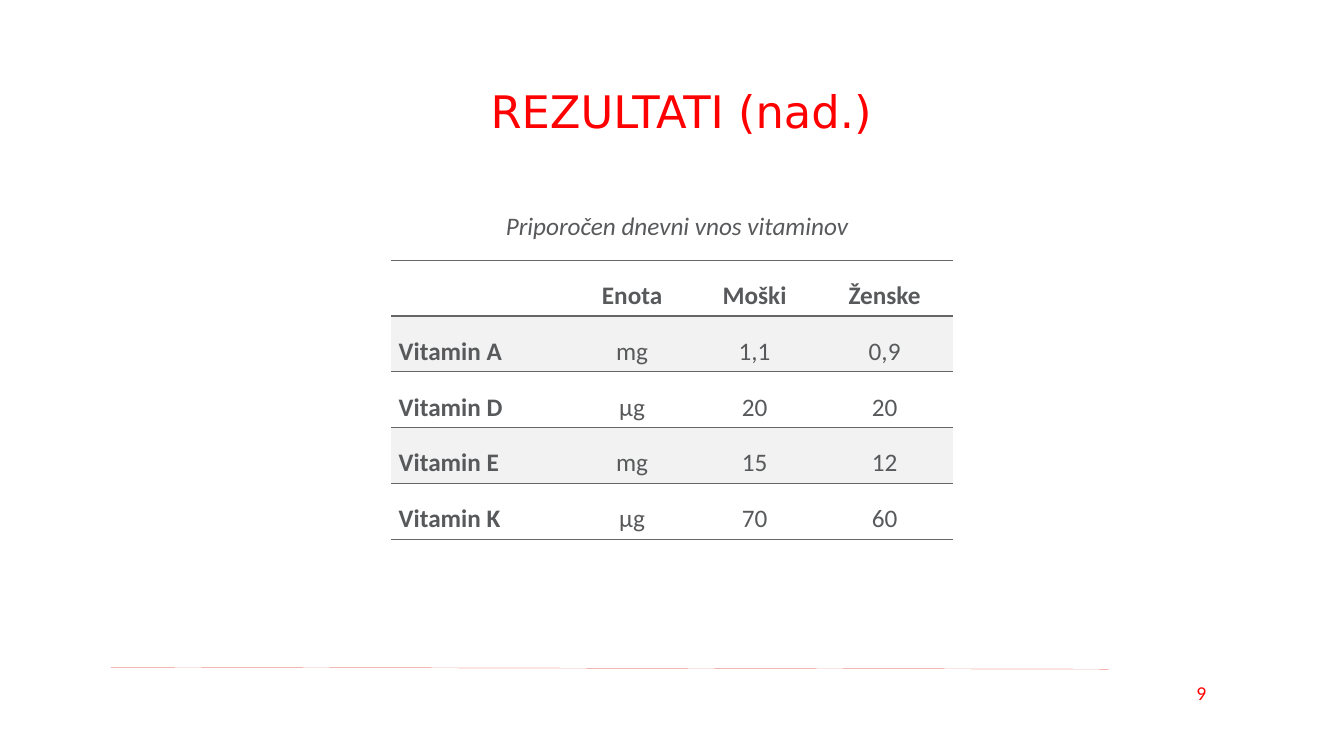
import pptx
import pptx.util
import pptx.dml.color
import pptx.enum.dml
import pptx.enum.shapes
import pptx.enum.text
import pptx.oxml
import pptx.oxml.ns

Pt = pptx.util.Pt
ALIGN = pptx.enum.text.PP_ALIGN
MIDDLE = pptx.enum.text.MSO_ANCHOR.MIDDLE
GREY, RED = "58595B", "FF0000"


def paint(color, code):
    color.rgb = pptx.dml.color.RGBColor.from_string(code)


def write(frame, text, size, code, face="Calibri", align=ALIGN.CENTER):
    frame.text = text
    para = frame.paragraphs[0]
    para.alignment = align
    for run in para.runs:
        run.font.size = Pt(size)
        run.font.name = face
        paint(run.font.color, code)
    return para


deck = pptx.Presentation()
deck.slide_width, deck.slide_height = Pt(960), Pt(540)
slide = deck.slides.add_slide(deck.slide_layouts[5])
shapes = slide.shapes

rule = shapes.add_connector(
    pptx.enum.shapes.MSO_CONNECTOR.STRAIGHT, Pt(79.2), Pt(476.6), Pt(792), Pt(478))
paint(rule.line.color, "E03127")
rule.line.width = Pt(0.15)
rule.line.dash_style = pptx.enum.dml.MSO_LINE.ROUND_DOT
rule._element.spPr.append(pptx.oxml.parse_xml(
    f'<a:effectLst {pptx.oxml.ns.nsdecls("a")}/>'))

title = shapes.title
title.left, title.top, title.width, title.height = Pt(72.7), Pt(49.7), Pt(828), Pt(63.4)
title.text_frame.vertical_anchor = MIDDLE
write(title.text_frame, "REZULTATI (nad.)", 32, RED, "DejaVu Sans").line_spacing = 0.9

rows = [
    ("", "Enota", "Moški", "Ženske"),
    ("Vitamin A", "mg", "1,1", "0,9"),
    ("Vitamin D", "µg", "20", "20"),
    ("Vitamin E", "mg", "15", "12"),
    ("Vitamin K", "µg", "70", "60"),
]
widths = [128.9, 86.4, 88.6, 97.2]
frame = shapes.add_table(
    len(rows), len(widths), Pt(279.4), Pt(185.8), Pt(sum(widths)), Pt(39.9 * len(rows)))
table = frame.table
style = table._tbl.tblPr.find(pptx.oxml.ns.qn("a:tableStyleId"))
style.text = "{2D5ABB26-0587-4C30-8999-92F81FD0307C}"
for col, width in zip(table.columns, widths):
    col.width = Pt(width)

for r, row in enumerate(rows):
    table.rows[r].height = Pt(39.9)
    for c, text in enumerate(row):
        cell = table.cell(r, c)
        cell.vertical_anchor = MIDDLE
        cell.margin_left = cell.margin_right = Pt(5.4)
        cell.margin_top = cell.margin_bottom = Pt(0)
        align = ALIGN.CENTER if c else ALIGN.LEFT
        para = write(cell.text_frame, text, 18, GREY, align=align)
        para.line_spacing = 1.5
        for run in para.runs:
            run.font.bold = r == 0 or c == 0
        if r % 2:
            cell.fill.solid()
            paint(cell.fill.fore_color, "F2F2F2")
        else:
            cell.fill.background()
        for spot, side in enumerate(("lnT", "lnB")):
            edge = pptx.oxml.parse_xml(
                f'<a:{side} {pptx.oxml.ns.nsdecls("a")} w="12700"><a:solidFill>'
                f'<a:srgbClr val="666666"/></a:solidFill></a:{side}>')
            cell._tc.get_or_add_tcPr().insert(spot, edge)

label = shapes.add_textbox(Pt(354.2), Pt(146.9), Pt(265.7), Pt(29)).text_frame
label.word_wrap = False
label.auto_size = pptx.enum.text.MSO_AUTO_SIZE.SHAPE_TO_FIT_TEXT
para = write(label, "Priporočen dnevni vnos vitaminov", 18, GREY, align=ALIGN.LEFT)
para.runs[0].font.italic = True

page = shapes.add_textbox(Pt(839.5), Pt(483.1), Pt(37.4), Pt(28.8)).text_frame
page.word_wrap = True
write(page, "9", 14, RED)

deck.save("out.pptx")
